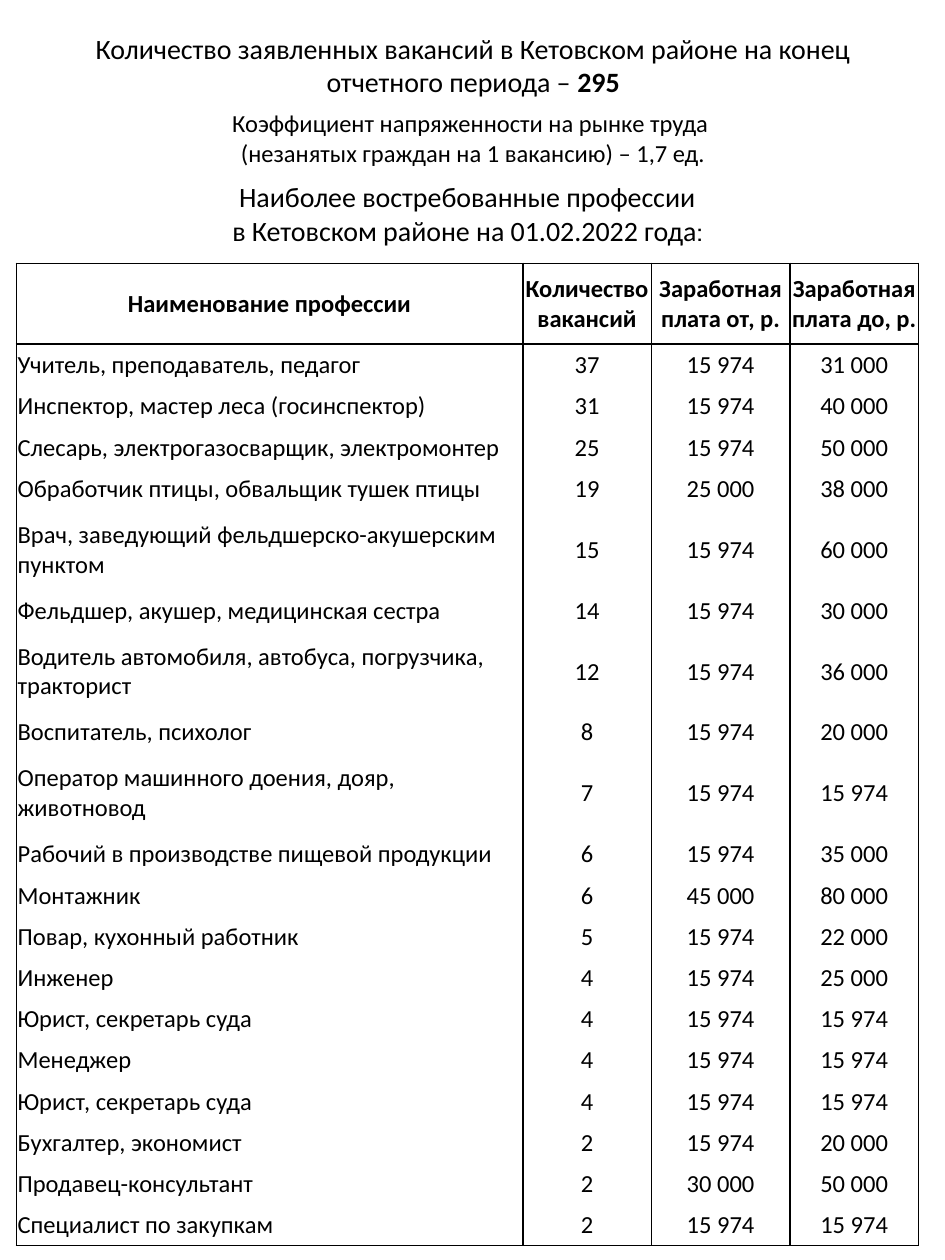
from lxml.etree import SubElement
from pptx import Presentation
from pptx.dml.color import RGBColor
from pptx.enum.text import MSO_ANCHOR, MSO_AUTO_SIZE, PP_ALIGN
from pptx.oxml.ns import qn
from pptx.util import Inches, Pt

BLACK = RGBColor(0x00, 0x00, 0x00)
FONT = "Calibri"

HEADER = ["Наименование профессии", "Количество вакансий",
          "Заработная плата от, р.", "Заработная плата до, р."]
JOBS = [
    ("Учитель, преподаватель, педагог", "37", "15 974", "31 000"),
    ("Инспектор, мастер леса (госинспектор)", "31", "15 974", "40 000"),
    ("Слесарь, электрогазосварщик, электромонтер", "25", "15 974", "50 000"),
    ("Обработчик птицы, обвальщик тушек птицы", "19", "25 000", "38 000"),
    ("Врач, заведующий фельдшерско-акушерским пунктом", "15", "15 974", "60 000"),
    ("Фельдшер, акушер, медицинская сестра", "14", "15 974", "30 000"),
    ("Водитель автомобиля, автобуса, погрузчика, тракторист", "12", "15 974", "36 000"),
    ("Воспитатель, психолог", "8", "15 974", "20 000"),
    ("Оператор машинного доения, дояр, животновод", "7", "15 974", "15 974"),
    ("Рабочий в производстве пищевой продукции", "6", "15 974", "35 000"),
    ("Монтажник", "6", "45 000", "80 000"),
    ("Повар, кухонный работник", "5", "15 974", "22 000"),
    ("Инженер", "4", "15 974", "25 000"),
    ("Юрист, секретарь суда", "4", "15 974", "15 974"),
    ("Менеджер", "4", "15 974", "15 974"),
    ("Юрист, секретарь суда", "4", "15 974", "15 974"),
    ("Бухгалтер, экономист", "2", "15 974", "20 000"),
    ("Продавец-консультант", "2", "30 000", "50 000"),
    ("Специалист по закупкам", "2", "15 974", "15 974"),
]
COL_WIDTHS = [4.02, 1.02, 1.1, 1.02]
TABLE_HEIGHT = 7.8
TALL_ROW = 0.64
TALL_ROWS = {0, 5, 7, 9}  # header and two-line names


def format_run(r, size, bold=False, font=FONT):
    r.font.name = font
    r.font.size = Pt(size)
    r.font.bold = bold
    r.font.color.rgb = BLACK


def add_heading(s, left, top, width, height, size, lines):
    """Each line is a list of (text, bold, font) pieces."""
    tf = s.shapes.add_textbox(Inches(left), Inches(top),
                              Inches(width), Inches(height)).text_frame
    tf.word_wrap = True
    tf.auto_size = MSO_AUTO_SIZE.SHAPE_TO_FIT_TEXT
    for i, pieces in enumerate(lines):
        p = tf.paragraphs[0] if i == 0 else tf.add_paragraph()
        p.alignment = PP_ALIGN.CENTER
        for text, bold, font in pieces:
            r = p.add_run()
            r.text = text
            format_run(r, size, bold, font)


def set_borders(cell, sides):
    """Draw 1 pt lines on the given sides and hide the others."""
    tcPr = cell._tc.get_or_add_tcPr()
    for side in "LRTB":
        ln = SubElement(tcPr, qn(f"a:ln{side}"), w=str(Pt(1)))
        if side in sides:
            fill = SubElement(ln, qn("a:solidFill"))
            SubElement(fill, qn("a:srgbClr"), val=str(BLACK))
        else:
            SubElement(ln, qn("a:noFill"))


def fill_cell(cell, text, centered, bold, sides):
    cell.margin_left = cell.margin_right = cell.margin_top = Inches(0.01)
    cell.margin_bottom = 0
    cell.vertical_anchor = MSO_ANCHOR.MIDDLE
    set_borders(cell, sides)
    cell.fill.background()
    cell.text_frame.text = text
    p = cell.text_frame.paragraphs[0]
    p.alignment = PP_ALIGN.CENTER if centered else PP_ALIGN.LEFT
    format_run(p.runs[0], 14, bold)


def add_jobs_table(s, left, top):
    rows = [HEADER, *JOBS]
    last = len(rows) - 1
    table = s.shapes.add_table(len(rows), len(HEADER), Inches(left), Inches(top),
                               Inches(sum(COL_WIDTHS)), Inches(TABLE_HEIGHT)).table
    table.first_row = table.horz_banding = False
    for column, width in zip(table.columns, COL_WIDTHS):
        column.width = Inches(width)

    # Single-line rows share what the tall rows leave
    low_row = (TABLE_HEIGHT - TALL_ROW * len(TALL_ROWS)) / (len(rows) - len(TALL_ROWS))
    for i, values in enumerate(rows):
        table.rows[i].height = Inches(TALL_ROW if i in TALL_ROWS else low_row)
        sides = "LR" + ("T" if i <= 1 else "") + ("B" if i in (0, last) else "")
        for j, text in enumerate(values):
            fill_cell(table.cell(i, j), text, i == 0 or j > 0, i == 0, sides)


def main():
    prs = Presentation()
    prs.slide_width, prs.slide_height = Inches(7.5), Inches(10)
    s = prs.slides.add_slide(prs.slide_layouts[6])

    # Table title
    add_heading(s, 0.44, 1.38, 6.54, 0.64, 16, [
        [("Наиболее востребованные профессии", False, FONT)],
        [("в Кетовском районе на 01.02.2022 года", False, FONT), (":", False, "Cabin")],
    ])

    # Professions in demand
    add_jobs_table(s, 0.13, 2.09)

    # Total vacancies and labour market tension
    add_heading(s, 0.45, 0.2, 6.61, 0.64, 16, [
        [("Количество заявленных вакансий в Кетовском районе на конец "
          "отчетного периода – ", False, FONT), ("295", True, FONT)],
    ])
    add_heading(s, 0.16, 0.81, 7.19, 0.57, 14, [
        [("Коэффициент напряженности на рынке труда ", False, FONT)],
        [("(незанятых граждан на 1 вакансию) – 1,7 ед.", False, FONT)],
    ])

    prs.save("out.pptx")


if __name__ == "__main__":
    main()
